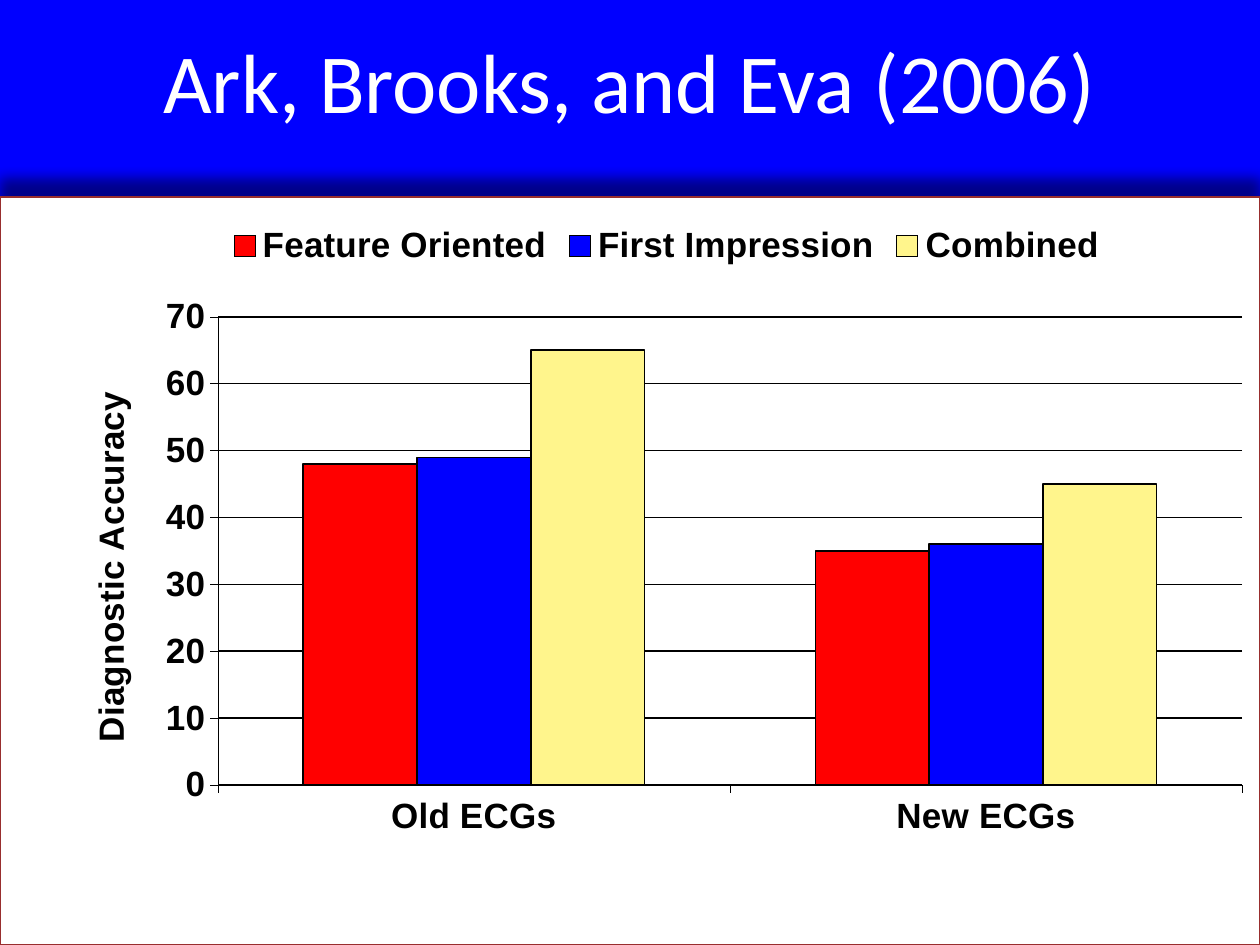
from lxml.etree import SubElement
from pptx import Presentation
from pptx.chart.data import CategoryChartData
from pptx.dml.color import RGBColor
from pptx.enum.chart import XL_CHART_TYPE, XL_LEGEND_POSITION, XL_TICK_MARK
from pptx.enum.shapes import MSO_SHAPE
from pptx.enum.text import MSO_ANCHOR, PP_ALIGN
from pptx.oxml import parse_xml
from pptx.oxml.ns import nsdecls, qn
from pptx.util import Pt

BLUE = RGBColor(0x00, 0x00, 0xFF)
RED = RGBColor(0xFF, 0x00, 0x00)
YELLOW = RGBColor(0xFF, 0xF5, 0x8C)
BROWN = RGBColor(0x98, 0x2E, 0x2E)
BLACK = RGBColor(0x00, 0x00, 0x00)
WHITE = RGBColor(0xFF, 0xFF, 0xFF)

PX = 914400 // 126
W, H = 1260, 945
TITLE = "Ark, Brooks, and Eva (2006)"
AXIS_TITLE = "Diagnostic Accuracy"
CATEGORIES = ["Old ECGs", "New ECGs"]
SERIES = [
    ("Feature Oriented", (48, 35), RED),
    ("First Impression", (49, 36), BLUE),
    ("Combined", (65, 45), YELLOW),
]
TITLE_BOX = (94, -10, 1071, 179)
PANEL_BOX = (0, 197, 1260, 748)
CHART_BOX = (73, 210, 1187, 672)
PLOT = {"x": 0.122, "y": 0.159, "w": 0.863, "h": 0.697}
SHADOW = (
    f'<a:effectLst {nsdecls("a")}><a:outerShdw blurRad="{Pt(8)}" dist="{Pt(10)}" '
    'dir="16200000" rotWithShape="0"><a:srgbClr val="000000">'
    '<a:alpha val="45000"/></a:srgbClr></a:outerShdw></a:effectLst>'
)


def emu(box):
    return [v * PX for v in box]


def set_font(f, size, name="Arial", color=BLACK, bold=True):
    f.size, f.name, f.bold = Pt(size), name, bold
    f.color.rgb = color


def set_line(line, color, width):
    line.color.rgb = color
    line.width = Pt(width)


def add_panel(s):
    sp = s.shapes.add_shape(MSO_SHAPE.RECTANGLE, *emu(PANEL_BOX))
    sp.fill.solid()
    sp.fill.fore_color.rgb = WHITE
    set_line(sp.line, BROWN, 1)
    sp._element.spPr.append(parse_xml(SHADOW))


def add_title(s):
    tf = s.shapes.add_textbox(*emu(TITLE_BOX)).text_frame
    tf.word_wrap = True
    tf.vertical_anchor = MSO_ANCHOR.MIDDLE
    p = tf.paragraphs[0]
    p.text = TITLE
    p.alignment = PP_ALIGN.CENTER
    set_font(p.font, 48, "Calibri", WHITE, False)


def set_plot_layout(chart):
    area = chart._chartSpace.chart.plotArea
    old = area.find(qn("c:layout"))
    if old is not None:
        area.remove(old)
    layout = parse_xml(f'<c:layout {nsdecls("c")}/>')
    area.insert(0, layout)
    manual = SubElement(layout, qn("c:manualLayout"))
    settings = {"layoutTarget": "inner", "xMode": "edge", "yMode": "edge", **PLOT}
    for tag, val in settings.items():
        SubElement(manual, qn(f"c:{tag}")).set("val", str(val))


def add_chart(s):
    data = CategoryChartData()
    data.categories = CATEGORIES
    for name, vals, _ in SERIES:
        data.add_series(name, vals)
    chart = s.shapes.add_chart(
        XL_CHART_TYPE.COLUMN_CLUSTERED, *emu(CHART_BOX), data
    ).chart
    set_font(chart.font, 14)
    chart.has_title = False
    chart.has_legend = True
    chart.legend.position = XL_LEGEND_POSITION.TOP
    chart.legend.include_in_layout = False
    set_font(chart.legend.font, 20)

    plot = chart.plots[0]
    plot.gap_width, plot.overlap = 150, 0
    plot.vary_by_categories = False
    for ser, (_, _, color) in zip(plot.series, SERIES):
        ser.format.fill.solid()
        ser.format.fill.fore_color.rgb = color
        set_line(ser.format.line, BLACK, 0.87)

    val = chart.value_axis
    for axis in (chart.category_axis, val):
        axis.major_tick_mark = XL_TICK_MARK.OUTSIDE
        set_font(axis.tick_labels.font, 20)
        set_line(axis.format.line, BLACK, 0.22)
    val.minimum_scale, val.maximum_scale, val.major_unit = 0, 70, 10
    val.has_major_gridlines = True
    set_line(val.major_gridlines.format.line, BLACK, 0.87)
    p = val.axis_title.text_frame.paragraphs[0]
    p.text = AXIS_TITLE
    set_font(p.font, 20)
    set_plot_layout(chart)


def main():
    """Build the slide on diagnostic accuracy."""
    prs = Presentation()
    prs.slide_width, prs.slide_height = W * PX, H * PX
    s = prs.slides.add_slide(prs.slide_layouts[6])
    s.background.fill.solid()
    s.background.fill.fore_color.rgb = BLUE
    add_panel(s)
    add_title(s)
    add_chart(s)
    prs.save("out.pptx")


if __name__ == "__main__":
    main()
